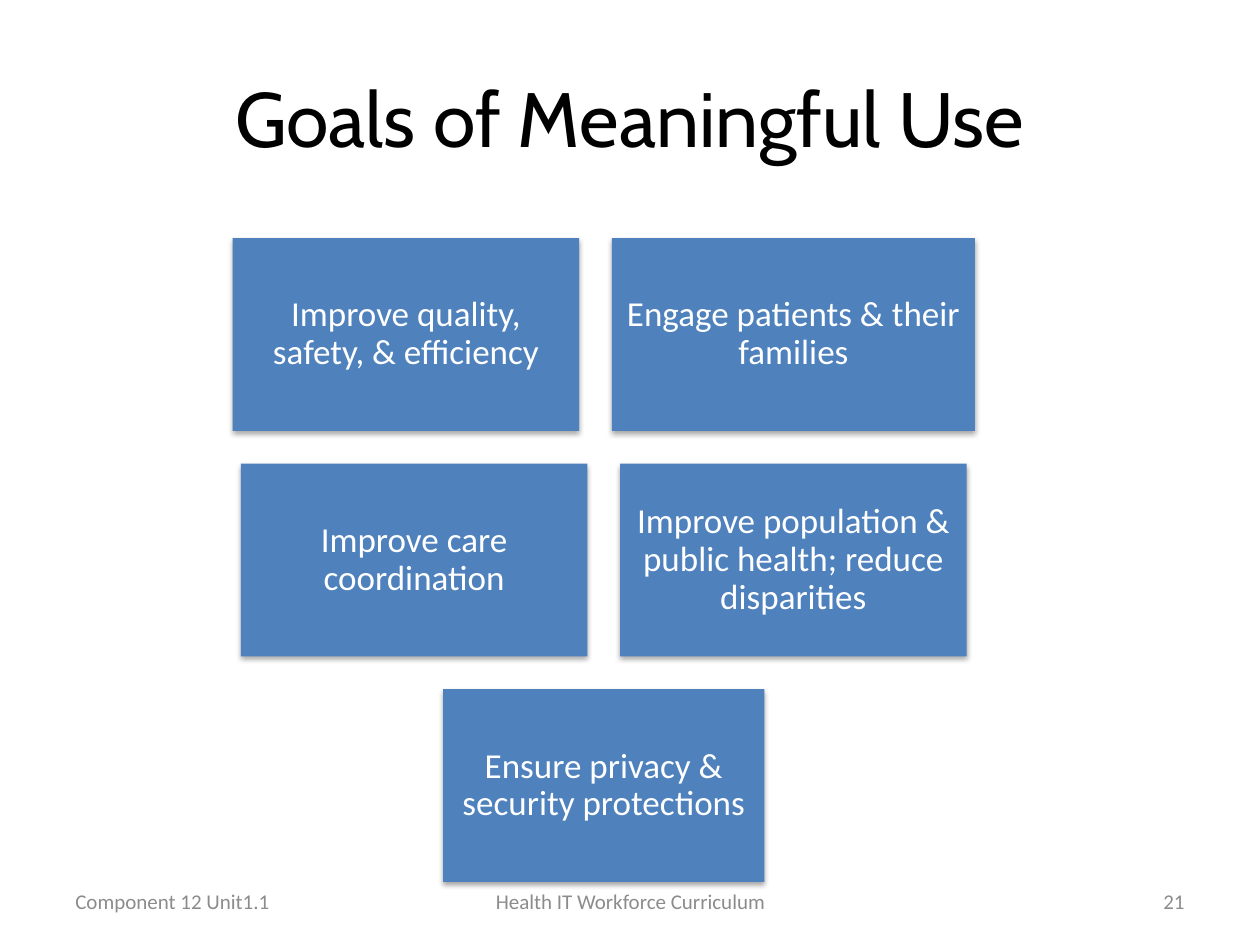
from dataclasses import dataclass

from lxml.etree import SubElement
from pptx import Presentation
from pptx.dml.color import RGBColor
from pptx.enum.shapes import MSO_SHAPE
from pptx.enum.text import MSO_ANCHOR, PP_ALIGN
from pptx.oxml.ns import qn
from pptx.util import Inches, Pt


@dataclass(frozen=True)
class Theme:
    """Colours, fonts and type sizes of the slide."""
    title: tuple = ("Cabin", 44, "000000")
    goal: tuple = ("Calibri", 20, "FFFFFF")
    footer: tuple = ("Calibri", 12, "8C8C8C")
    box_fill: str = "4F81BD"
    shadow: str = "000000"


class SlideBuilder:
    """Places elements on a grid of 100 columns by 75 rows."""

    def __init__(self, presentation, theme):
        """Add a title-only slide and keep the theme."""
        self.theme = theme
        self.column = presentation.slide_width / 100
        self.row = presentation.slide_height / 75
        self.slide = presentation.slides.add_slide(presentation.slide_layouts[5])

    def area(self, left, top, width, height):
        """Turn columns and rows into lengths."""
        return (round(left * self.column), round(top * self.row),
                round(width * self.column), round(height * self.row))

    def set_text(self, shape, text, style, alignment, frame_format=None, paragraph_format=None):
        """Fill a shape with one formatted paragraph."""
        name, size, color = style
        frame = shape.text_frame
        frame.text = text
        paragraph = frame.paragraphs[0]
        font = paragraph.runs[0].font
        font.color.rgb = RGBColor.from_string(color)
        formats = (
            (frame, {"word_wrap": True, "vertical_anchor": MSO_ANCHOR.MIDDLE} | (frame_format or {})),
            (paragraph, {"alignment": alignment} | (paragraph_format or {})),
            (font, {"name": name, "size": Pt(size)}),
        )
        for target, values in formats:
            for attribute, value in values.items():
                setattr(target, attribute, value)

    def title(self, text, *place):
        """Move and format the title placeholder."""
        shape = self.slide.shapes.title
        for attribute, value in zip(("left", "top", "width", "height"), self.area(*place)):
            setattr(shape, attribute, value)
        self.set_text(shape, text, self.theme.title, PP_ALIGN.CENTER)

    def add_shadow(self, shape):
        """Give a shape a soft shadow straight below it."""
        shape.shadow.inherit = False
        effects = shape._element.spPr.find(qn("a:effectLst"))
        shadow = SubElement(effects, qn("a:outerShdw"), blurRad="40000", dist="23000",
                            dir="5400000", rotWithShape="0")
        color = SubElement(shadow, qn("a:srgbClr"), val=self.theme.shadow)
        SubElement(color, qn("a:alpha"), val="35000")

    def goal(self, text, *place):
        """Draw one goal box."""
        shape = self.slide.shapes.add_shape(MSO_SHAPE.RECTANGLE, *self.area(*place))
        shape.fill.solid()
        shape.fill.fore_color.rgb = RGBColor.from_string(self.theme.box_fill)
        shape.line.fill.background()
        self.add_shadow(shape)
        margins = {f"margin_{side}": Inches(0.08) for side in ("left", "top", "right", "bottom")}
        self.set_text(shape, text, self.theme.goal, PP_ALIGN.CENTER, margins,
                      {"line_spacing": 0.9, "space_after": Pt(7)})

    def goal_rows(self, rows, center, top, height, gap):
        """Stack rows of goal boxes, each row centred on one axis."""
        for index, goals in enumerate(rows):
            row_width = sum(width for _, width in goals) + gap * (len(goals) - 1)
            left = center - row_width / 2
            for text, width in goals:
                self.goal(text, left, top + index * (height + gap), width, height)
                left += width + gap

    def footer(self, text, left, width, alignment):
        """Add one part of the footer line."""
        shape = self.slide.shapes.add_textbox(*self.area(left, 69.5, width, 4))
        self.set_text(shape, text, self.theme.footer, alignment)


def main():
    """Build and save the slide."""
    presentation = Presentation()
    presentation.slide_width, presentation.slide_height = Inches(10), Inches(7.5)
    builder = SlideBuilder(presentation, Theme())
    builder.title("Goals of Meaningful Use", 5, 3, 90, 12.5)
    builder.goal_rows(
        [
            [("Improve quality, safety, & efficiency", 27.5),
             ("Engage patients & their families", 28.8)],
            [("Improve care coordination", 27.5),
             ("Improve population & public health; reduce disparities", 27.5)],
            [("Ensure privacy & security protections", 25.5)],
        ],
        center=47.92, top=18.9, height=15.3, gap=2.6,
    )
    builder.footer("Component 12 Unit1.1", 5, 23.3, PP_ALIGN.LEFT)
    builder.footer("Health IT Workforce Curriculum", 34.2, 31.7, PP_ALIGN.CENTER)
    builder.footer("21", 71.7, 23.3, PP_ALIGN.RIGHT)
    presentation.save("out.pptx")


if __name__ == "__main__":
    main()
